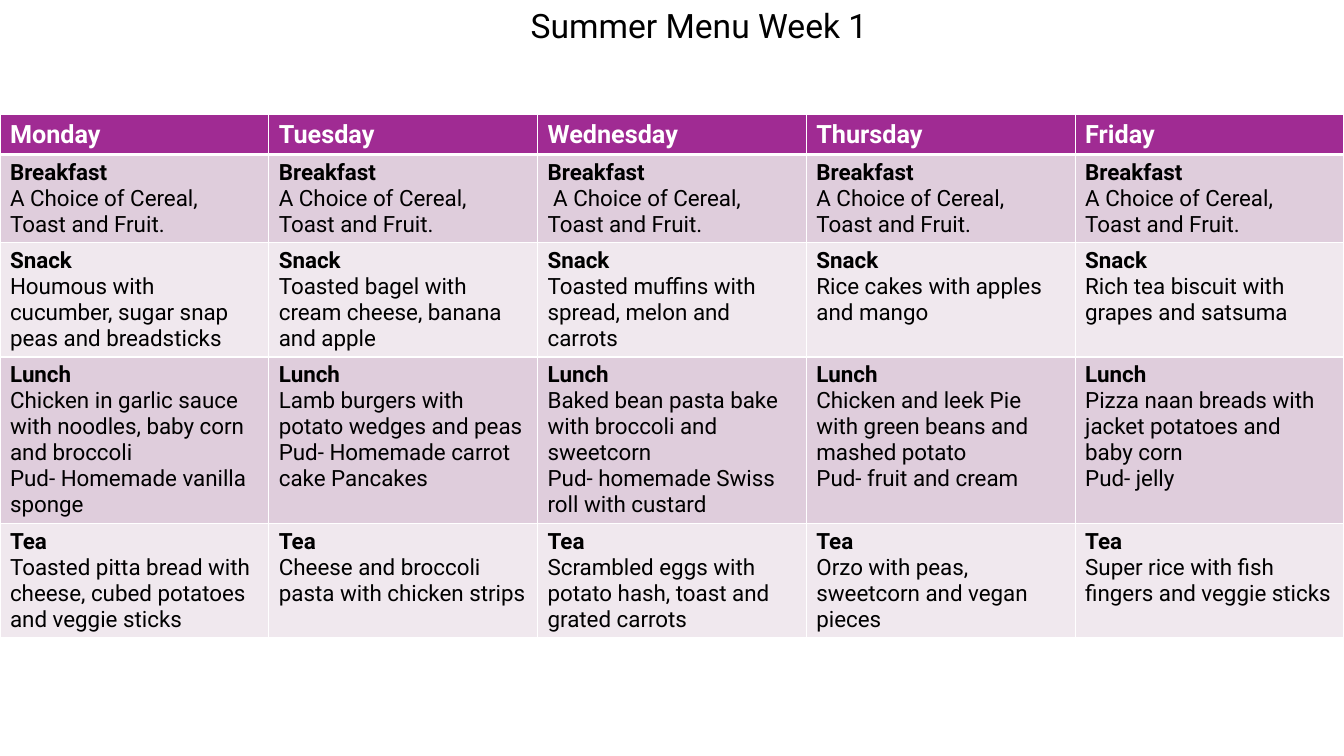
from lxml import etree
from pptx import Presentation
from pptx import util as u
from pptx.dml.color import RGBColor
from pptx.oxml.ns import qn

WHITE = RGBColor(0xFF, 0xFF, 0xFF)
BLACK = RGBColor(0, 0, 0)
PURPLE = RGBColor(0xA0, 0x2B, 0x93)
BANDS = [RGBColor(0xDF, 0xCD, 0xDC), RGBColor(0xF0, 0xE8, 0xEE)]

HEADING = {"name": "Roboto", "size": u.Pt(18), "bold": True}
MEAL = {"name": "Roboto", "size": u.Pt(16), "bold": True}
DISH = {"name": "Roboto", "size": u.Pt(16), "bold": False}
TITLE = {"name": "Roboto", "size": u.Pt(24), "bold": False}

DAYS = ["Monday", "Tuesday", "Wednesday", "Thursday", "Friday"]
CEREAL = "A Choice of Cereal, Toast and Fruit."
MENU = {
    "Breakfast": [[CEREAL], [CEREAL], [" " + CEREAL], [CEREAL], [CEREAL]],
    "Snack": [
        ["Houmous with cucumber, sugar snap peas and breadsticks"],
        ["Toasted bagel with cream cheese, banana and apple"],
        ["Toasted muffins with spread, melon and carrots"],
        ["Rice cakes with apples and mango"],
        ["Rich tea biscuit with grapes and satsuma"],
    ],
    "Lunch": [
        ["Chicken in garlic sauce with noodles, baby corn and broccoli",
         "Pud- Homemade vanilla sponge"],
        ["Lamb burgers with potato wedges and peas",
         "Pud- Homemade carrot cake Pancakes"],
        ["Baked bean pasta bake with broccoli and sweetcorn",
         "Pud- homemade Swiss roll with custard"],
        ["Chicken and leek Pie with green beans and mashed potato",
         "Pud- fruit and cream"],
        ["Pizza naan breads with jacket potatoes and baby corn",
         "Pud- jelly"],
    ],
    "Tea": [
        ["Toasted pitta bread with cheese, cubed potatoes and veggie sticks"],
        ["Cheese and broccoli pasta with chicken strips"],
        ["Scrambled eggs with potato hash, toast and grated carrots"],
        ["Orzo with peas, sweetcorn and vegan pieces"],
        ["Super rice with fish fingers and veggie sticks"],
    ],
}
ROW_HEIGHTS = [28.2, 62.8, 81.4, 118.5, 81.4]


def write_lines(frame, lines, color):
    for index, (words, style) in enumerate(lines):
        para = frame.paragraphs[0] if index == 0 else frame.add_paragraph()
        span = para.add_run()
        span.text = words
        span.font.color.rgb = color
        for key, value in style.items():
            setattr(span.font, key, value)


def set_borders(cell, widths):
    properties = cell._tc.get_or_add_tcPr()
    for index, (side, width) in enumerate(widths.items()):
        line = etree.Element(qn("a:" + side), w=str(u.Pt(width)))
        solid = etree.SubElement(line, qn("a:solidFill"))
        etree.SubElement(solid, qn("a:srgbClr"), val=str(WHITE))
        properties.insert(index, line)


def fill_cell(cell, lines, color, background, top=1, bottom=1):
    cell.fill.solid()
    cell.fill.fore_color.rgb = background
    write_lines(cell.text_frame, lines, color)
    set_borders(cell, {"lnL": 1, "lnR": 1, "lnT": top, "lnB": bottom})


def add_title(page, left, top, width, height):
    box = page.shapes.add_textbox(*map(u.Pt, (left, top, width, height)))
    box.text_frame.word_wrap = True
    write_lines(box.text_frame, [("Summer Menu Week 1", TITLE)], BLACK)


def add_menu(page, left, top, width):
    area = map(u.Pt, (left, top, width, sum(ROW_HEIGHTS)))
    grid = page.shapes.add_table(len(ROW_HEIGHTS), len(DAYS), *area).table
    for row, height in zip(grid.rows, ROW_HEIGHTS):
        row.height = u.Pt(height)
    for column, day in enumerate(DAYS):
        grid.columns[column].width = u.Pt(width / len(DAYS))
        fill_cell(grid.cell(0, column), [(day, HEADING)], WHITE, PURPLE, bottom=3)
    for row, (meal, dishes) in enumerate(MENU.items(), 1):
        for column, parts in enumerate(dishes):
            lines = [(meal, MEAL)] + [(part, DISH) for part in parts]
            fill_cell(grid.cell(row, column), lines, BLACK,
                      BANDS[(row - 1) % 2], top=3 if row == 1 else 1)


def main():
    deck = Presentation()
    deck.slide_width, deck.slide_height = u.Pt(960), u.Pt(540)
    page = deck.slides.add_slide(deck.slide_layouts[6])
    add_menu(page, 0, 82, 960)
    add_title(page, 372, 0, 276, 36)
    deck.save("out.pptx")


if __name__ == "__main__":
    main()
